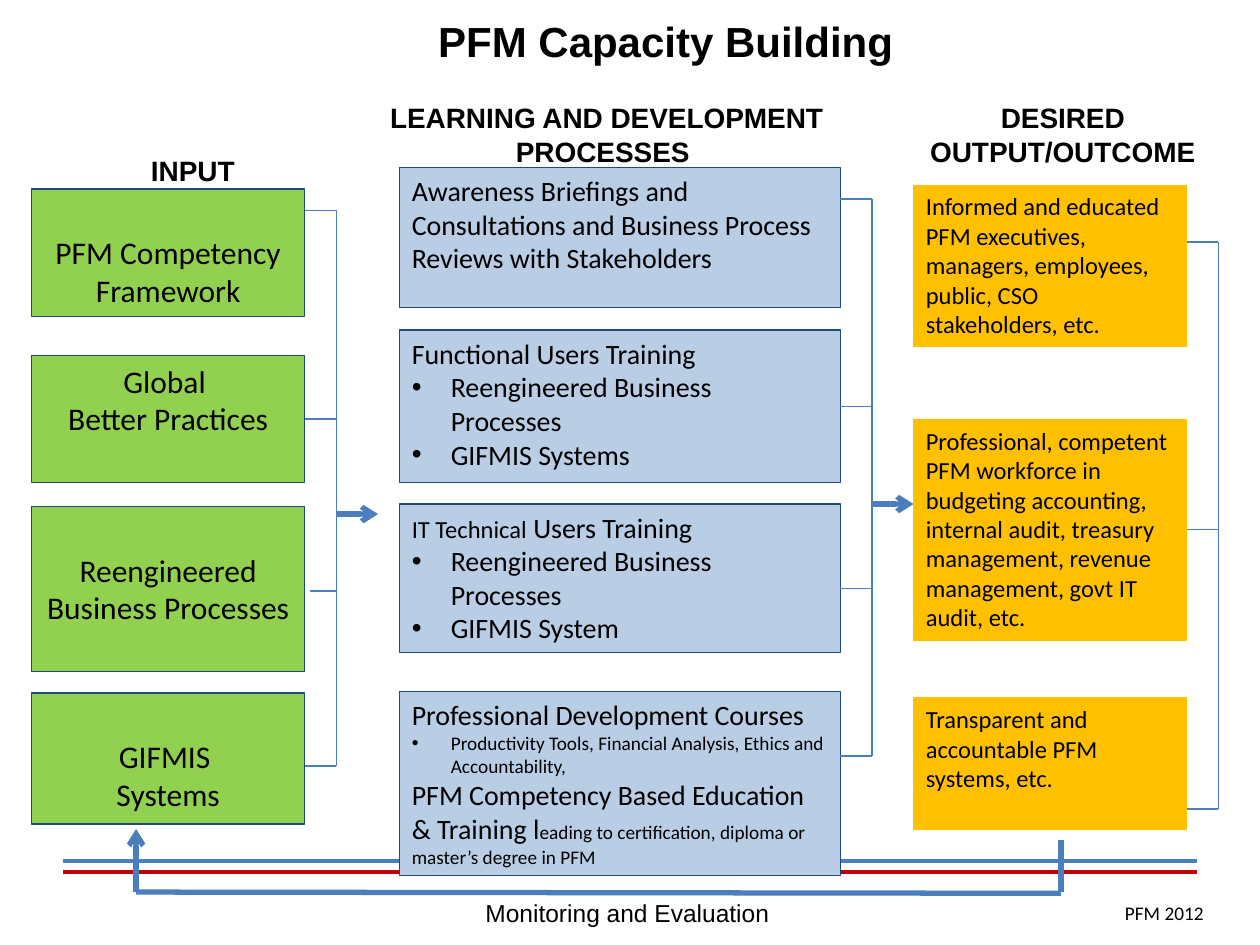
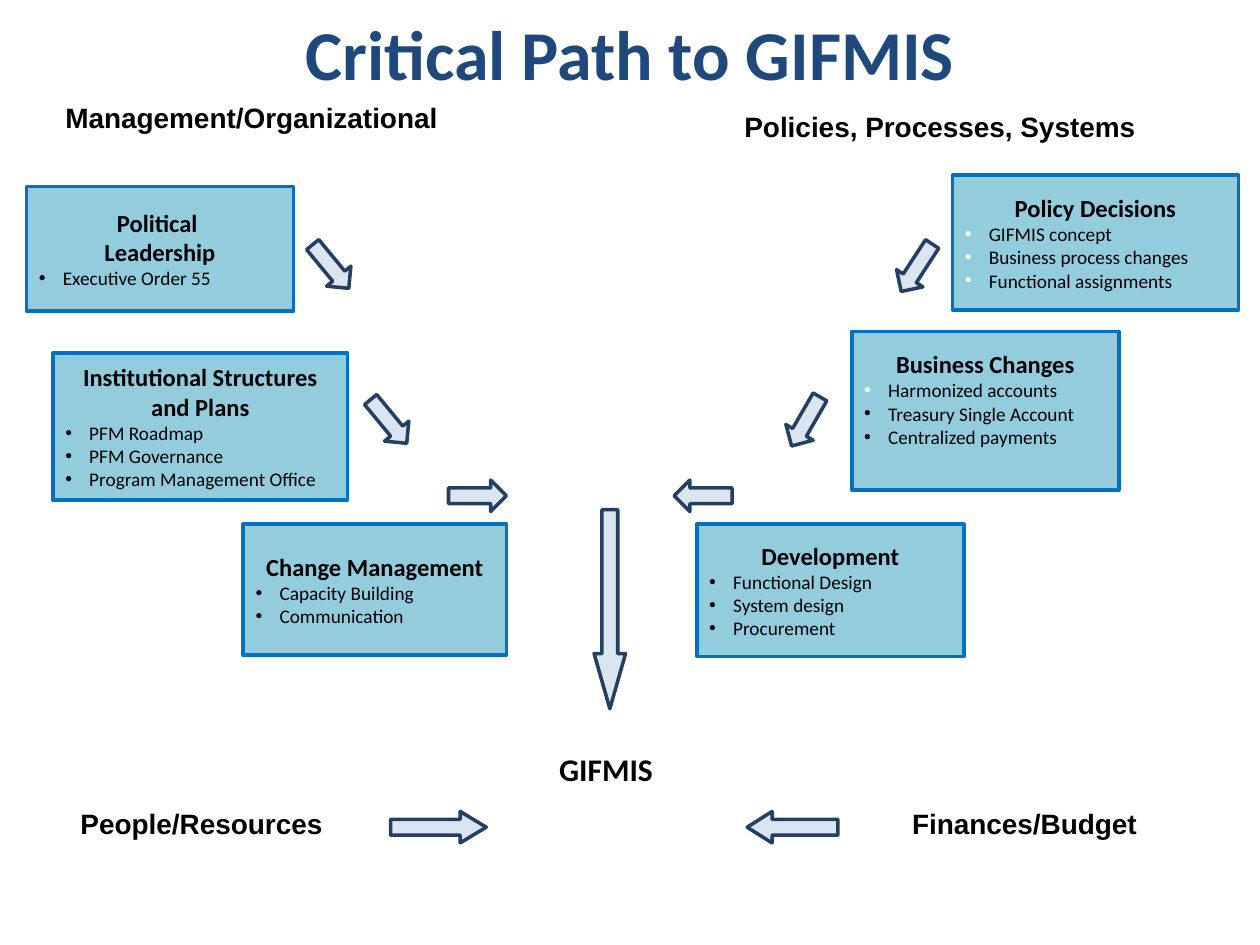
from lxml import etree
from pptx import Presentation
from pptx.dml.color import RGBColor
from pptx.enum.shapes import MSO_CONNECTOR as Link, MSO_SHAPE as Shape
from pptx.enum.text import MSO_ANCHOR as Anchor, PP_ALIGN as Align
from pptx.oxml.ns import qn
from pptx.util import Inches, Pt

BLACK, WHITE, NAVY = "000000", "FFFFFF", "1F497D"
GREEN, PALE_BLUE, AMBER = "92D050", "B9CDE5", "FFC000"
BLUE, RED = "4B7EBC", "C00000"
TEAL, TEAL_EDGE = "93CDDD", "0070C0"
ARROW_FILL, ARROW_EDGE = "DBE5F1", "243F60"
LEFT, CENTER = Align.LEFT, Align.CENTER
RIGHT_SIDE = 3

# Slide 1: each box is top, height, then its paragraphs.
# A paragraph is (bulleted, [(text, size), ...]).
INPUTS = [  # the third value is the top inset
    (1.5, 1.01, 0.35, ["PFM Competency Framework"]),
    (2.82, 1.01, 0.05, ["Global ", "Better Practices"]),
    (4.02, 1.31, 0.35, ["Reengineered Business Processes"]),
    (5.5, 1.04, 0.35, ["GIFMIS ", "Systems"]),
]
PROCESSES = [
    (1.33, 1.11, [(False, [("Awareness Briefings and Consultations and "
                            "Business Process Reviews with Stakeholders", 16)])]),
    (2.62, 1.21, [(False, [("Functional Users Training", 16)]),
                  (True, [("Reengineered Business Processes", 16)]),
                  (True, [("GIFMIS Systems", 16)])]),
    (4, 1.18, [(False, [("IT Technical", 14), (" Users Training", 16)]),
               (True, [("Reengineered Business Processes", 16)]),
               (True, [("GIFMIS System", 16)])]),
    (5.49, 1.46, [(False, [("Professional Development Courses", 16)]),
                  (True, [("Productivity Tools, Financial Analysis, "
                           "Ethics and Accountability,", 11)]),
                  (False, [("PFM Competency Based Education & Training l", 16),
                           ("eading to certification, diploma or "
                            "master’s degree in PFM", 11)])]),
]
OUTCOMES = [
    (1.47, 1.28, "Informed and educated PFM executives, managers, employees, "
                 "public, CSO stakeholders, etc."),
    (3.33, 1.75, "Professional, competent PFM workforce in budgeting accounting, "
                 "internal audit, treasury management, revenue management, "
                 "govt IT audit, etc."),
    (5.54, 1.04, "Transparent and accountable PFM systems, etc."),
]
COLUMN_HEADS = [
    ("INPUT", (0.57, 1.17, 1.92, 0.37)),
    ("LEARNING AND DEVELOPMENT PROCESSES ", (2.67, 0.75, 4.29, 0.64)),
    ("DESIRED OUTPUT/OUTCOME", (7.14, 0.75, 2.59, 0.64)),
]

# Slide 2: place, heading lines, bullets, count of white bullets, bottom inset
STEPS = [
    ((0.21, 1.48, 2.12, 0.99), ["Political ", "Leadership"],
     ["Executive Order 55"], 0, 0.05),
    ((0.42, 2.8, 2.34, 1.17), ["Institutional Structures and Plans"],
     ["PFM Roadmap", "PFM Governance", "Program Management Office"], 0, 0.05),
    ((1.93, 4.16, 2.09, 1.04), ["Change Management"],
     ["Capacity Building", "Communication"], 0, 0.05),
    ((7.56, 1.39, 2.27, 1.07), ["Policy Decisions"],
     ["GIFMIS concept", "Business process changes", "Functional assignments"], 3, 0.05),
    ((5.53, 4.16, 2.12, 1.05), ["Development"],
     ["Functional Design", "System design", "Procurement"], 0, 0.05),
    ((6.76, 2.63, 2.12, 1.26), ["Business Changes"],
     ["Harmonized accounts", "Treasury Single Account", "Centralized payments"], 1, 0.24),
]
AREA_HEADS = [
    ("Management/Organizational", (0.42, 0.75, 3.33, 0.49)),
    ("Policies, Processes, Systems", (5.81, 0.82, 4.03, 0.48)),
    ("People/Resources", (0.54, 6.35, 2.41, 0.53)),
    ("Finances/Budget", (7.14, 6.35, 2.17, 0.53)),
]
ARROWS = [  # left, top, width, rotation, head length ratio
    (2.4, 1.99, 0.45, 50.5, 0.5),
    (2.86, 3.22, 0.45, 50.5, 0.5),
    (4.05, 4.71, 1.58, 90, 1.75),
    (5.35, 3.81, 0.46, 180, 0.5),
    (3.56, 3.81, 0.46, 0, 0.5),
    (6.17, 3.22, 0.45, 120, 0.5),
    (7.05, 2, 0.45, 123.1, 0.5),
    (3.1, 6.44, 0.76, 0, 0.83),
    (5.93, 6.44, 0.72, 180, 0.79),
]


def color(value):
    return RGBColor.from_string(value)


def add_para(frame, runs, size=16, align=LEFT, font="Calibri", bold=False,
             ink=BLACK, indent=0, bullet_ink=None):
    """Add one paragraph; runs is a string or a list of (text, size)."""
    para = frame.paragraphs[0]
    if para.runs:
        para = frame.add_paragraph()
    para.alignment = align
    if indent:
        props = para._p.get_or_add_pPr()
        props.set("marL", str(Inches(indent)))
        props.set("indent", str(-Inches(indent)))
        if bullet_ink:
            tint = etree.SubElement(props, qn("a:buClr"))
            etree.SubElement(tint, qn("a:srgbClr"), val=bullet_ink)
        etree.SubElement(props, qn("a:buFont"), typeface="Arial")
        etree.SubElement(props, qn("a:buChar"), char="•")
    for text, points in [(runs, size)] if isinstance(runs, str) else runs:
        span = para.add_run()
        span.text = text
        span.font.name, span.font.size, span.font.bold = font, Pt(points), bold
        span.font.color.rgb = color(ink)


def add_label(page, text, place, anchor=Anchor.TOP, **style):
    frame = page.shapes.add_textbox(*map(Inches, place)).text_frame
    frame.word_wrap = True
    frame.vertical_anchor = anchor
    add_para(frame, text, **style)


def add_block(page, kind, place, fill, edge, weight, anchor=Anchor.TOP):
    box = page.shapes.add_shape(kind, *map(Inches, place))
    box.shadow.inherit = False
    box.fill.solid()
    box.fill.fore_color.rgb = color(fill)
    box.line.color.rgb = color(edge)
    box.line.width = Pt(weight)
    box.text_frame.word_wrap = True
    box.text_frame.vertical_anchor = anchor
    return box


def add_line(page, start, end, weight=0.75, ink=BLUE, arrow=False):
    line = page.shapes.add_connector(Link.STRAIGHT, *map(Inches, start + end))
    line.line.color.rgb = color(ink)
    line.line.width = Pt(weight)
    props = line.element.spPr
    if arrow:
        etree.SubElement(props.find(qn("a:ln")), qn("a:tailEnd"), type="arrow")
    etree.SubElement(props, qn("a:effectLst"))
    return line


def add_bracket(page, edge, spine, ticks, middle_box, arrow_y=None):
    """Ticks from a column's edge to a spine, one from the middle of a box."""
    for y in ticks:
        add_line(page, (edge, y), (spine, y))
    middle = (middle_box.top + middle_box.height / 2) / Inches(1)
    joined = add_line(page, (edge, middle), (spine, middle))
    joined.begin_connect(middle_box, RIGHT_SIDE)
    add_line(page, (spine, ticks[0]), (spine, ticks[-1]))
    if arrow_y:
        add_line(page, (spine, arrow_y), (spine + 0.33, arrow_y), 3, arrow=True)


def build_capacity(page):
    # Footer rules, then title and column heads
    for y, ink in ((6.83, BLUE), (6.92, RED)):
        add_line(page, (0.5, y), (9.5, y), 2.25, ink)
    add_label(page, "PFM Capacity Building ", (1.33, 0.06, 8, 0.53), Anchor.MIDDLE,
              size=24, align=CENTER, font="Arial", bold=True)
    for text, place in COLUMN_HEADS:
        add_label(page, text, place, align=CENTER, font="Arial", bold=True)

    # Three columns of boxes
    inputs, processes, outcomes = [], [], []
    for top, height, inset, lines in INPUTS:
        box = add_block(page, Shape.RECTANGLE, (0.25, top, 2.17, height),
                        GREEN, NAVY, 0.75)
        box.text_frame.margin_top = Inches(inset)
        for text in lines:
            add_para(box.text_frame, text, 18, CENTER)
        inputs.append(box)
    for top, height, paras in PROCESSES:
        box = add_block(page, Shape.RECTANGLE, (3.17, top, 3.5, height),
                        PALE_BLUE, NAVY, 0.75)
        for bulleted, runs in paras:
            add_para(box.text_frame, runs, indent=0.31 if bulleted else 0)
        processes.append(box)
    for top, height, text in OUTCOMES:
        box = add_block(page, Shape.RECTANGLE, (7.25, top, 2.17, height),
                        AMBER, AMBER, 0.75)
        add_para(box.text_frame, text, 14)
        outcomes.append(box)

    # Brackets beside the columns
    add_bracket(page, 2.42, 2.67, (1.67, 6.08), inputs[1], 4.08)
    add_line(page, (2.46, 4.69), (2.67, 4.69))
    add_bracket(page, 6.67, 6.92, (1.58, 4.67, 6), processes[1], 4)
    add_bracket(page, 9.42, 9.67, (1.92, 6.42), outcomes[1])

    # Feedback loop and footer
    add_line(page, (8.42, 6.67), (8.42, 7.08), 3)
    add_line(page, (1.08, 7.08), (8.42, 7.09), 3)
    add_line(page, (1.08, 7.08), (1.08, 6.58), 3, arrow=True)
    add_label(page, "Monitoring and Evaluation", (3, 7.08, 3.96, 0.34),
              size=14, align=CENTER, font="Arial")
    add_label(page, "PFM 2012", (8.83, 7.1, 0.83, 0.29), size=11)


def build_critical_path(page):
    add_label(page, "Critical Path to GIFMIS", (0.5, 0, 9, 0.83), Anchor.MIDDLE,
              size=40, align=CENTER, bold=True, ink=NAVY)

    # Steps on both sides
    for place, heading, bullets, white_count, bottom in STEPS:
        frame = add_block(page, Shape.RECTANGLE, place, TEAL, TEAL_EDGE, 2,
                          Anchor.MIDDLE).text_frame
        frame.margin_bottom = Inches(bottom)
        for text in heading:
            add_para(frame, text, 14, CENTER, bold=True)
        for number, text in enumerate(bullets):
            add_para(frame, text, 11, indent=0.19,
                     bullet_ink=WHITE if number < white_count else BLACK)

    # Area heads and the arrows toward the goal
    for text, place in AREA_HEADS:
        add_label(page, text, place, font="Arial", bold=True)
    for left, top, width, turn, head in ARROWS:
        arrow = add_block(page, Shape.RIGHT_ARROW, (left, top, width, 0.25),
                          ARROW_FILL, ARROW_EDGE, 2)
        arrow.rotation = turn
        arrow.adjustments[1] = head
    add_label(page, "GIFMIS", (4.34, 5.9, 1, 0.4), size=18, bold=True)


def main():
    deck = Presentation()
    deck.slide_width, deck.slide_height = Inches(10), Inches(7.5)
    for build in (build_capacity, build_critical_path):
        build(deck.slides.add_slide(deck.slide_layouts[6]))
    deck.save("out.pptx")


if __name__ == "__main__":
    main()
